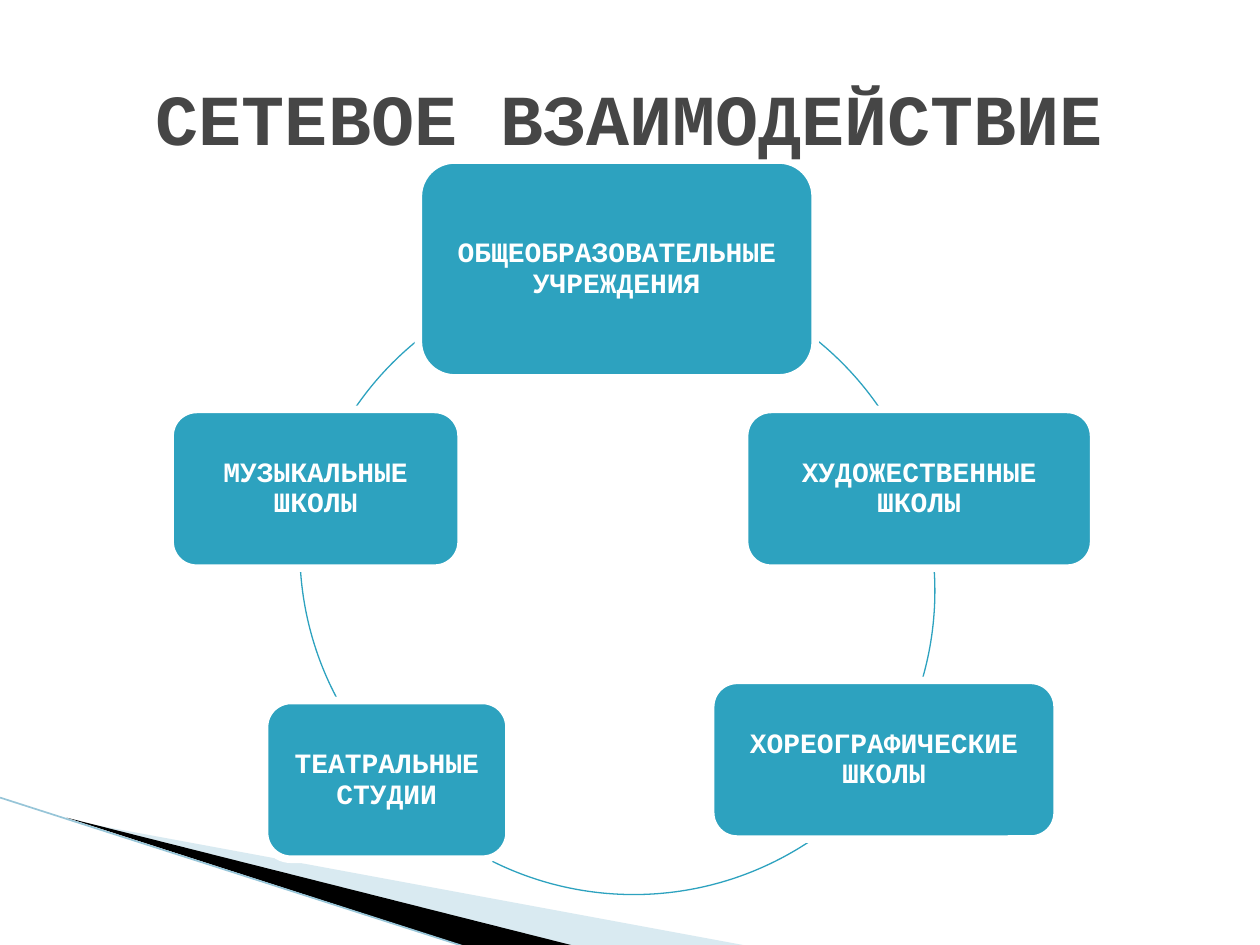
from lxml.etree import SubElement
from pptx import Presentation
from pptx.dml.color import RGBColor
from pptx.enum.shapes import MSO_CONNECTOR, MSO_SHAPE
from pptx.enum.text import MSO_ANCHOR, PP_ALIGN
from pptx.oxml.ns import qn
from pptx.util import Inches, Pt

COLORS = {"teal": "2DA2BF", "white": "FFFFFF", "title": "464646",
          "pale": "A0CBDC", "black": "000000", "edge": "97C5D8"}
SIDE = 5.04  # diameter of the ring

# left, top, width, height, text
NODES = [
    (1.97, 0, 3.15, 1.73, "ОБЩЕОБРАЗОВАТЕЛЬНЫЕ УЧРЕЖДЕНИЯ"),
    (4.56, 1.98, 2.77, 1.26, "ХУДОЖЕСТВЕННЫЕ ШКОЛЫ"),
    (4.29, 4.13, 2.75, 1.26, "ХОРЕОГРАФИЧЕСКИЕ ШКОЛЫ"),
    (0.75, 4.29, 1.94, 1.26, "ТЕАТРАЛЬНЫЕ СТУДИИ"),
    (0, 1.98, 2.31, 1.26, "МУЗЫКАЛЬНЫЕ ШКОЛЫ"),
]
# left, top of the circle, start and end angle in degrees
ARCS = [
    (1.03, 0.87, 308.9, 325.7),
    (1.03, 0.9, 356.1, 16.4),
    (1.16, 0.79, 56.7, 116.5),
    (1.03, 0.57, 151.8, 176.4),
    (1.03, 0.87, 214.2, 231.1),
]


def color(name):
    return RGBColor.from_string(COLORS[name])


def paint(shape, fill=None, line=None, width=0.75):
    shape.shadow.inherit = False
    if fill:
        shape.fill.solid()
        shape.fill.fore_color.rgb = color(fill)
    else:
        shape.fill.background()
    if line:
        shape.line.color.rgb = color(line)
        shape.line.width = Pt(width)
    else:
        shape.line.fill.background()


def write(shape, text, size, ink, inset, space=1.0):
    frame = shape.text_frame
    form = {"word_wrap": True, "vertical_anchor": MSO_ANCHOR.MIDDLE}
    for side in ("left", "right", "top", "bottom"):
        form["margin_" + side] = Inches(inset)
    for key, val in form.items():
        setattr(frame, key, val)
    para = frame.paragraphs[0]
    para.text = text
    para.alignment = PP_ALIGN.CENTER
    para.line_spacing = space
    font = para.runs[0].font
    for key, val in {"name": "Courier New", "size": Pt(size), "bold": True}.items():
        setattr(font, key, val)
    font.color.rgb = color(ink)


def wedge(shapes, left, top, points, fill):
    spots = [(Inches(left + x), Inches(top + y)) for x, y in points]
    form = shapes.build_freeform(*spots[0], scale=1.0)
    form.add_line_segments(spots[1:], close=True)
    shape = form.convert_to_shape()
    paint(shape, fill)
    return shape


def add_corner(shapes, left, top):
    """Draw the slanted wedges in the lower left corner."""
    pale = wedge(shapes, left, top,
                 [(0.55, 0.18), (5.95, 1.18), (4.56, 1.18)], "pale")
    tint = pale.fill._xPr.find(qn("a:solidFill"))[0]
    SubElement(tint, qn("a:alpha"), val="40000")
    wedge(shapes, left, top, [(0.53, 0.16), (4.57, 1.18), (3.72, 1.19)], "black")
    edge = shapes.add_connector(MSO_CONNECTOR.STRAIGHT, Inches(left), Inches(top),
                                Inches(left + 3.71), Inches(top + 1.19))
    edge.line.color.rgb = color("edge")
    edge.line.width = Pt(0.95)
    SubElement(edge._element.spPr, qn("a:effectLst"))


def add_ring(shapes, left, top):
    """Draw the five nodes and the arcs that link them."""
    for x, y, start, end in ARCS:
        arc = shapes.add_shape(MSO_SHAPE.ARC, Inches(left + x), Inches(top + y),
                               Inches(SIDE), Inches(SIDE))
        for i, angle in enumerate((start, end)):
            arc.adjustments[i] = angle * 0.6  # 60000 units a degree, over 100000
        paint(arc, line="teal")
    for x, y, wide, high, text in NODES:
        node = shapes.add_shape(MSO_SHAPE.ROUNDED_RECTANGLE, Inches(left + x),
                                Inches(top + y), Inches(wide), Inches(high))
        paint(node, "teal", "white", 4.33)
        write(node, text, 16, "white", 0.07, 0.9)


def add_title(shapes, left, top, wide, high):
    box = shapes.add_textbox(Inches(left), Inches(top), Inches(wide), Inches(high))
    write(box, "СЕТЕВОЕ ВЗАИМОДЕЙСТВИЕ", 41, "title", 0.05)


def main():
    deck = Presentation()
    deck.slide_width, deck.slide_height = Inches(10), Inches(7.5)
    shapes = deck.slides.add_slide(deck.slide_layouts[6]).shapes
    add_corner(shapes, 0, 6.33)
    add_ring(shapes, 1.35, 1.27)
    add_title(shapes, 0.5, 0.3, 9, 1.25)
    deck.save("out.pptx")


if __name__ == "__main__":
    main()
